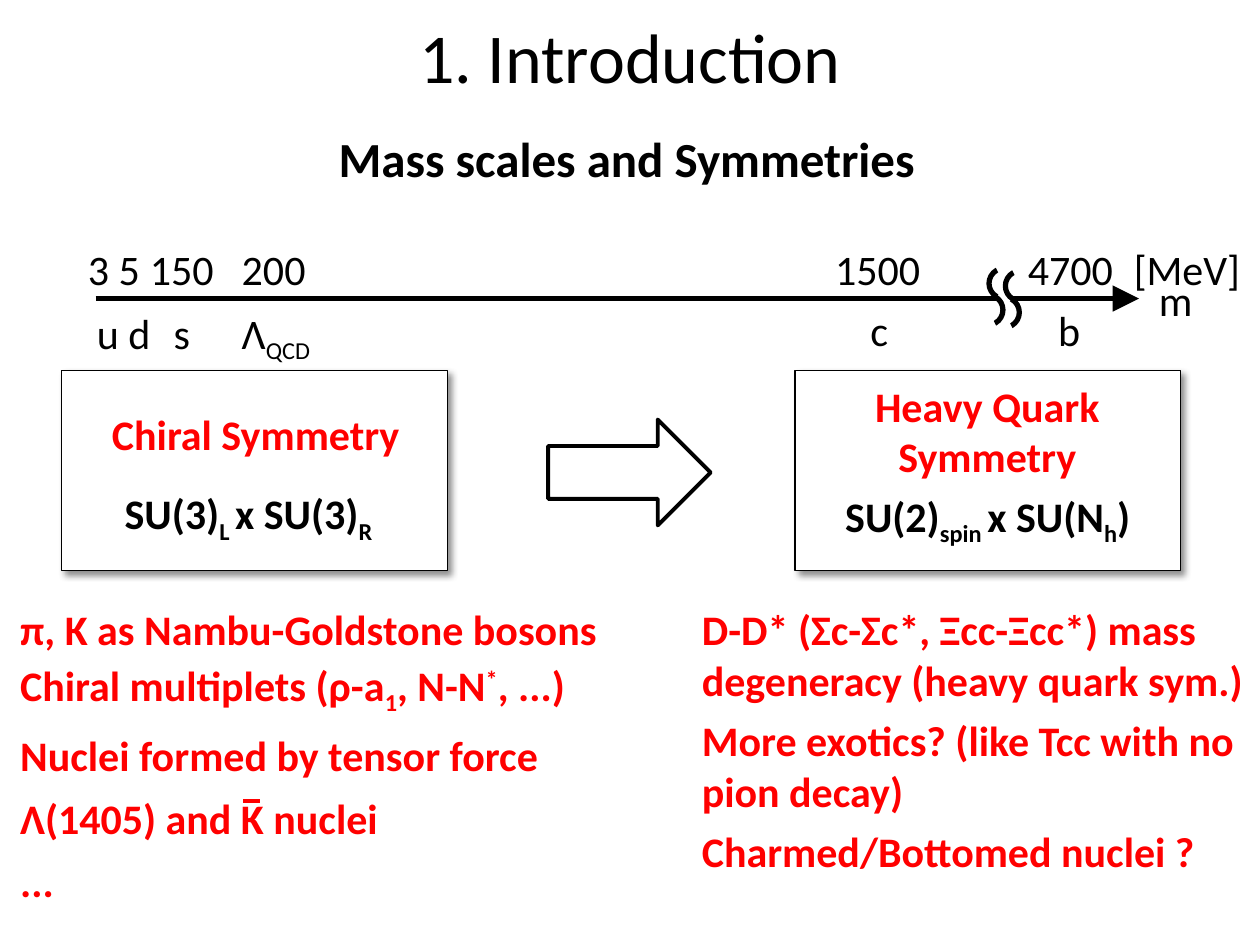
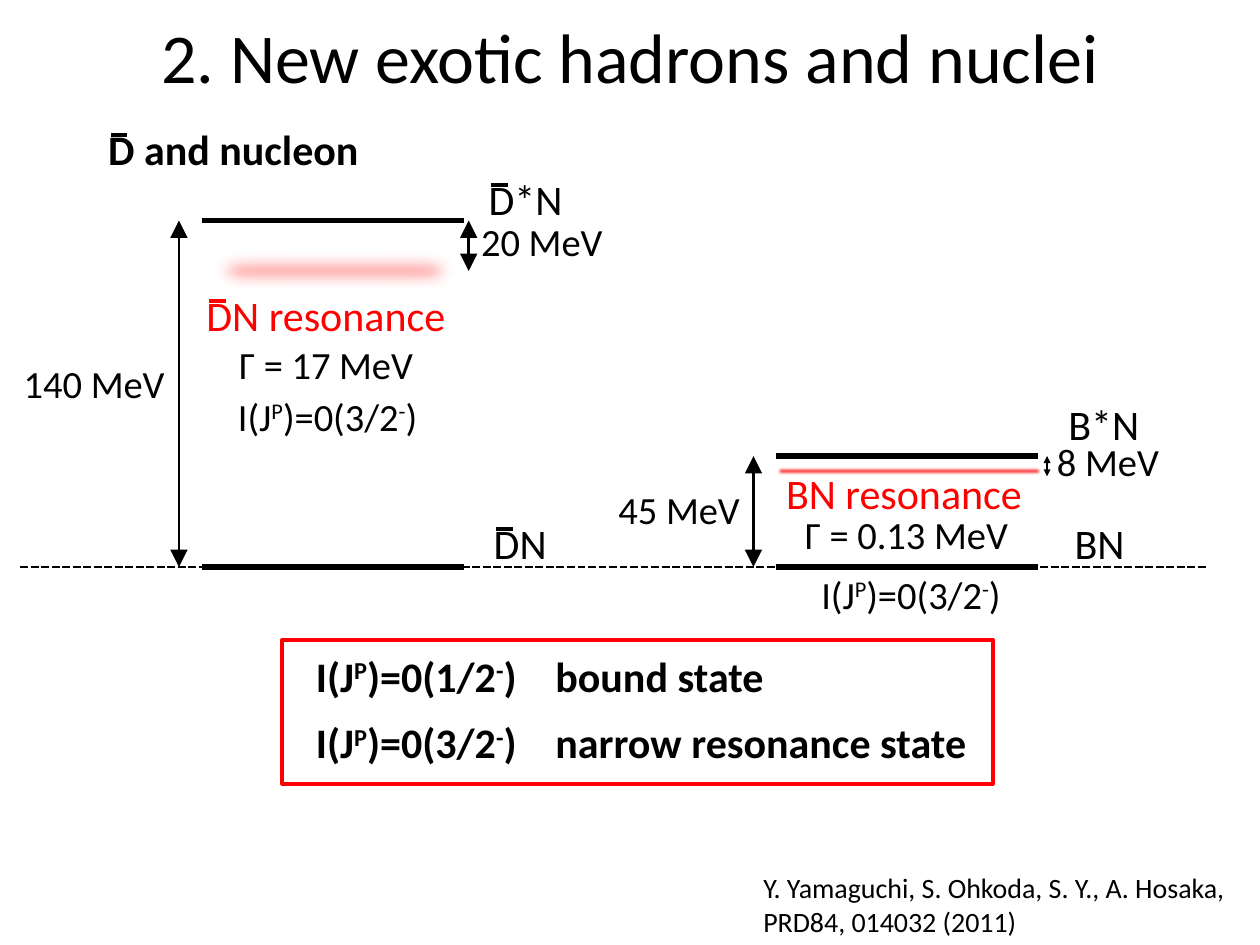
from lxml.etree import SubElement
from pptx import Presentation
from pptx.dml.color import RGBColor
from pptx.enum.dml import MSO_LINE
from pptx.enum.shapes import MSO_CONNECTOR, MSO_SHAPE as SHAPE
from pptx.enum.text import MSO_ANCHOR, MSO_AUTO_SIZE, PP_ALIGN
from pptx.oxml.ns import qn
from pptx.util import Inches, Pt

BLACK, WHITE, RED = "000000", "FFFFFF", "FF0000"
FONT = "Calibri"
BASELINES = {"^": "30000", "_": "-25000"}
SPIN_HALF = "I(J|^P|)=0(1/2|^-|)"
SPIN_THREE_HALVES = "I(J|^P|)=0(3/2|^-|)"


def rgb(code):
    """Turn a hex string into a colour."""
    return RGBColor.from_string(code)


def place(shape, box):
    """Move a shape to a (left, top, width, height) box in inches."""
    shape.left, shape.top, shape.width, shape.height = map(Inches, box)


def write(para, markup, size, color=BLACK, bold=False):
    """Write spans split by bars; ^ raises a span and _ lowers it."""
    for piece in markup.split("|"):
        span = para.add_run()
        span.text = piece.lstrip("^_")
        span.font.name, span.font.size, span.font.bold = FONT, Pt(size), bold
        span.font.color.rgb = rgb(color)
        if piece[0] in BASELINES:
            span.font._element.set("baseline", BASELINES[piece[0]])


def add_line(page, start, end, color=BLACK, width=3.0, heads=(), head_size="lg"):
    """Draw a straight line, with arrowheads at the named ends."""
    line = page.shapes.add_connector(
        MSO_CONNECTOR.STRAIGHT, *map(Inches, (*start, *end)))
    line.line.color.rgb = rgb(color)
    line.line.width = Pt(width)
    for head in heads:
        SubElement(line.line._get_or_add_ln(), qn(f"a:{head}"),
                   type="triangle", w=head_size, len=head_size)
    SubElement(line._element.spPr, qn("a:effectLst"))
    return line


def add_overbar(page, left, top, color=BLACK, width=2.0):
    """Draw the bar over an antiparticle's letter."""
    add_line(page, (left, top), (left + 0.13, top), color, width)


def add_label(page, left, top, width, *lines, size=24, color=BLACK, bold=False,
              bar=False, align=PP_ALIGN.LEFT):
    """Add a text label, with an overbar on its first letter if asked."""
    height = 0.1 + len(lines) * size / 60
    label = page.shapes.add_textbox(*map(Inches, (left, top, width, height)))
    frame = label.text_frame
    frame.word_wrap = True
    for index, line in enumerate(lines):
        para = frame.add_paragraph() if index else frame.paragraphs[0]
        para.alignment = align
        write(para, line, size, color, bold)
    if bar:
        add_overbar(page, left + 0.12, top + 0.14, color)


def add_shape(page, kind, box, fill=None, line=BLACK, width=0.75):
    """Add a preset shape without the theme's shadow."""
    shape = page.shapes.add_shape(kind, *map(Inches, box))
    shape.shadow.inherit = False
    if fill:
        shape.fill.solid()
        shape.fill.fore_color.rgb = rgb(fill)
    else:
        shape.fill.background()
    shape.line.color.rgb = rgb(line)
    shape.line.width = Pt(width)
    return shape


def add_effect(shape, name, **settings):
    """Put one effect on a shape and return its element."""
    effects = shape._element.spPr.find(qn("a:effectLst"))
    return SubElement(effects, qn(f"a:{name}"), **settings)


def add_page(deck, layout, title):
    """Add a slide with the shared title style."""
    page = deck.slides.add_slide(deck.slide_layouts[layout])
    place(page.shapes.title, (1.17, 0.06, 7.66, 0.91))
    frame = page.shapes.title.text_frame
    frame.auto_size = MSO_AUTO_SIZE.NONE
    frame.vertical_anchor = MSO_ANCHOR.TOP
    write(frame.paragraphs[0], title, 40)
    return page


def fill_list(body, box, items, gap):
    """Fill a body placeholder with red, unbulleted statements."""
    place(body, box)
    frame = body.text_frame
    frame.auto_size = MSO_AUTO_SIZE.NONE
    for index, item in enumerate(items):
        para = frame.add_paragraph() if index else frame.paragraphs[0]
        para.line_spacing = Pt(29.3)
        para.space_before, para.space_after = Pt(0), Pt(gap)
        props = para._p.get_or_add_pPr()
        props.set("marL", "0")
        props.set("indent", "0")
        SubElement(props, qn("a:buNone"))
        write(para, item, 24, RED, True)


def add_break(page, left, top):
    """Draw one wavy stroke of the axis break from two arcs."""
    for dx, dy, start, end in ((0.13, 0, 70.94, 145.06), (0, 0.21, 178.94, 37.06)):
        arc = add_shape(page, SHAPE.ARC, (left + dx, top + dy, 0.24, 0.24), width=3)
        arc.adjustments[0], arc.adjustments[1] = start, end


def add_mass_axis(page, left, top):
    """Draw the quark mass axis with values above and names below."""
    add_line(page, (left, top), (left + 7.16, top))
    add_line(page, (left + 7.28, top), (left + 8.28, top), heads=["tailEnd"])
    for dx, dy in ((6.96, -0.24), (7.09, -0.22)):
        add_break(page, left + dx, top + dy)
    ticks = (
        (-0.16, 0.66, "3 5", -0.09, "u d"),
        (0.33, 0.91, "150", 0.52, "s"),
        (1.06, 0.92, "200", 1.06, "Λ|_QCD"),
        (5.77, 0.95, "1500", 6.05, "c"),
        (7.3, 0.95, "4700", 7.54, "b"),
        (8.14, 1.1, "[MeV]", None, None),
    )
    for value_x, width, value, name_x, name in ticks:
        add_label(page, left + value_x, top - 0.49, width, value)
        if name:
            drop = 0 if name in "cb" else 0.02
            add_label(page, left + name_x, top + drop, width, name)
    add_label(page, left + 8.34, top - 0.24, 0.5, "m")


def add_symmetry_card(page, left, top, names, name_at, group, group_at):
    """Draw a shadowed card naming a symmetry and its group."""
    card = add_shape(page, SHAPE.RECTANGLE, (left, top, 3.06, 1.59), WHITE)
    shadow = add_effect(card, "outerShdw", blurRad="50800", dist="38100",
                        dir="2700000", algn="tl", rotWithShape="0")
    black = SubElement(shadow, qn("a:srgbClr"), val=BLACK)
    SubElement(black, qn("a:alpha"), val="43000")
    name_x, name_y, name_width = name_at
    group_x, group_y, group_width = group_at
    add_label(page, left + name_x, top + name_y, name_width, *names,
              color=RED, bold=True, align=PP_ALIGN.CENTER)
    add_label(page, left + group_x, top + group_y, group_width, group, bold=True)


def build_introduction(deck):
    """Build the slide on mass scales and symmetries."""
    page = add_page(deck, 3, "1. Introduction")
    add_label(page, 2.59, 0.97, 4.83, "Mass scales and Symmetries", size=28, bold=True)
    add_mass_axis(page, 0.76, 2.37)
    add_symmetry_card(page, 0.49, 2.94, ["Chiral Symmetry"], (0.24, 0.25, 2.6),
                      "SU(3)|_L |x SU(3)|_R", (0.4, 0.88, 2.22))
    add_symmetry_card(page, 6.31, 2.94, ["Heavy Quark", "Symmetry"], (0.53, 0.03, 1.99),
                      "SU(2)|_spin |x SU(N|_h|)", (0.3, 0.9, 2.56))
    add_shape(page, SHAPE.RIGHT_ARROW, (4.35, 3.33, 1.29, 0.84), WHITE, width=2.25)
    chiral, heavy = list(page.placeholders)[1:]
    fill_list(chiral, (0.06, 4.73, 4.9, 2.5), (
        "π, K as Nambu-Goldstone bosons",
        "Chiral multiplets (ρ-a|_1|, N-N|^*|, ...)",
        "Nuclei formed by tensor force",
        "Λ(1405) and K nuclei",
        "...",
    ), 6.7)
    fill_list(heavy, (5.47, 4.73, 4.53, 2.27), (
        "D-D* (Σc-Σc*, Ξcc-Ξcc*) mass degeneracy (heavy quark sym.)",
        "More exotics? (like Tcc with no pion decay)",
        "Charmed/Bottomed nuclei ?",
    ), 5)
    add_overbar(page, 1.93, 6.36, RED, 2.25)


def add_level_scheme(page, left, upper, threshold, band, softness, gap_arrow, labels):
    """Draw two thresholds, a blurred resonance and the energy gaps."""
    for level in (threshold, upper):
        add_line(page, (left, level), (left + 2.08, level))
    band_top, band_height = band
    glow = add_shape(page, SHAPE.RECTANGLE,
                     (left, upper + band_top, 2.11, band_height), RED, RED)
    add_effect(glow, "softEdge", rad=str(Pt(softness)))
    gap_x, gap, head_size = gap_arrow
    for dx, bottom, size in ((-0.18, threshold, "lg"), (gap_x, upper + gap, head_size)):
        add_line(page, (left + dx, bottom), (left + dx, upper), width=1.5,
                 heads=("headEnd", "tailEnd"), head_size=size)
    for dx, dy, width, text, style in labels:
        add_label(page, left + dx, upper + dy, width, text, **style)


def add_summary(page, left, top):
    """Draw the framed list of predicted states."""
    add_shape(page, SHAPE.RECTANGLE, (left, top, 5.64, 1.14), line=RED, width=2.25)
    states = ((SPIN_HALF, "bound state"),
              (SPIN_THREE_HALVES, "narrow resonance state"))
    for row, (numbers, state) in enumerate(states):
        row_top = top + 0.03 + 0.53 * row
        add_label(page, left + 0.17, row_top, 1.87, numbers, bold=True)
        add_label(page, left + 2.07, row_top, 3.53, state, bold=True)


def build_exotics(deck):
    """Build the slide on new exotic hadrons and nuclei."""
    page = add_page(deck, 5, "2. New exotic hadrons and nuclei")
    add_label(page, 0.76, 0.93, 2.25, "D and nucleon", bold=True, bar=True)
    base = add_line(page, (0.16, 4.5), (9.59, 4.5), width=1.5)
    base.line.dash_style = MSO_LINE.SQUARE_DOT
    barred, value = {"bar": True}, {"size": 22}
    add_level_scheme(page, 1.6, 1.75, 4.5, (0.19, 0.42), 12, (2.12, 0.4, "lg"), (
        (2.18, -0.42, 0.79, "D*N", barred),
        (2.22, 2.31, 0.62, "DN", barred),
        (-0.06, 0.5, 2.17, "DN resonance", {"color": RED, "bar": True}),
        (-1.51, 1.06, 1.43, "140 MeV", value),
        (2.12, -0.07, 1.22, "20 MeV", value),
        (0.2, 0.91, 1.66, "Γ = 17 MeV", value),
        (0.19, 1.32, 1.66, SPIN_THREE_HALVES, value),
    ))
    add_level_scheme(page, 6.16, 3.62, 4.5, (0.08, 0.08), 2, (2.15, 0.16, "sm"), (
        (2.22, -0.51, 0.79, "B*N", {}),
        (2.27, 0.44, 0.62, "BN", {}),
        (-0.02, 0.04, 2.12, "BN resonance", {"color": RED}),
        (-1.35, 0.19, 1.18, "45 MeV", value),
        (2.13, -0.19, 1.01, "8 MeV", value),
        (0.13, 0.39, 1.87, "Γ = 0.13 MeV", value),
        (0.26, 0.86, 1.66, SPIN_THREE_HALVES, value),
    ))
    add_summary(page, 2.24, 5.08)
    add_label(page, 5.96, 6.86, 4, "Y. Yamaguchi, S. Ohkoda, S. Y., A. Hosaka,",
              "PRD84, 014032 (2011)", size=16)


def main():
    """Build and save the deck."""
    deck = Presentation()
    deck.slide_width, deck.slide_height = Inches(10), Inches(7.5)
    build_introduction(deck)
    build_exotics(deck)
    deck.save("out.pptx")


if __name__ == "__main__":
    main()
